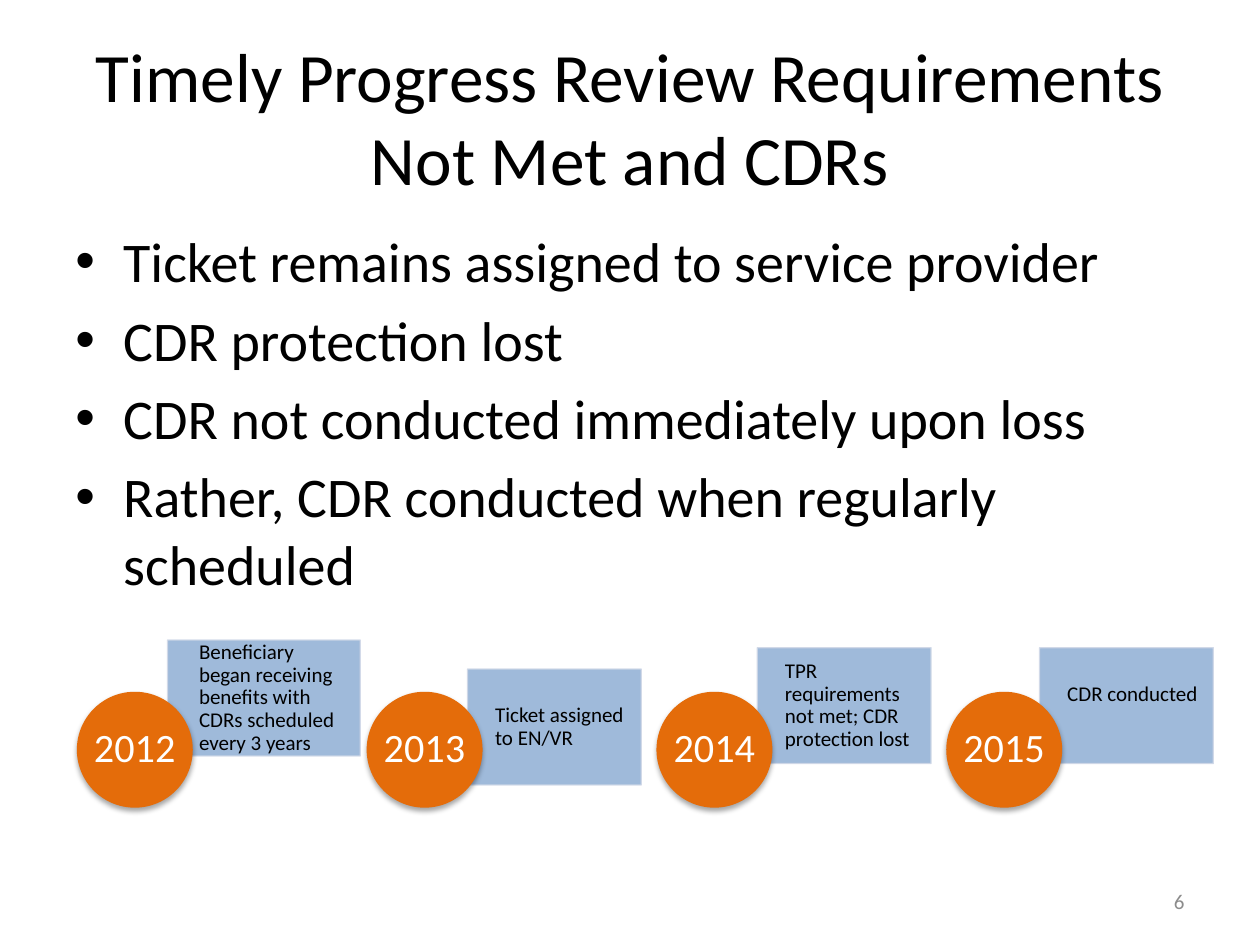
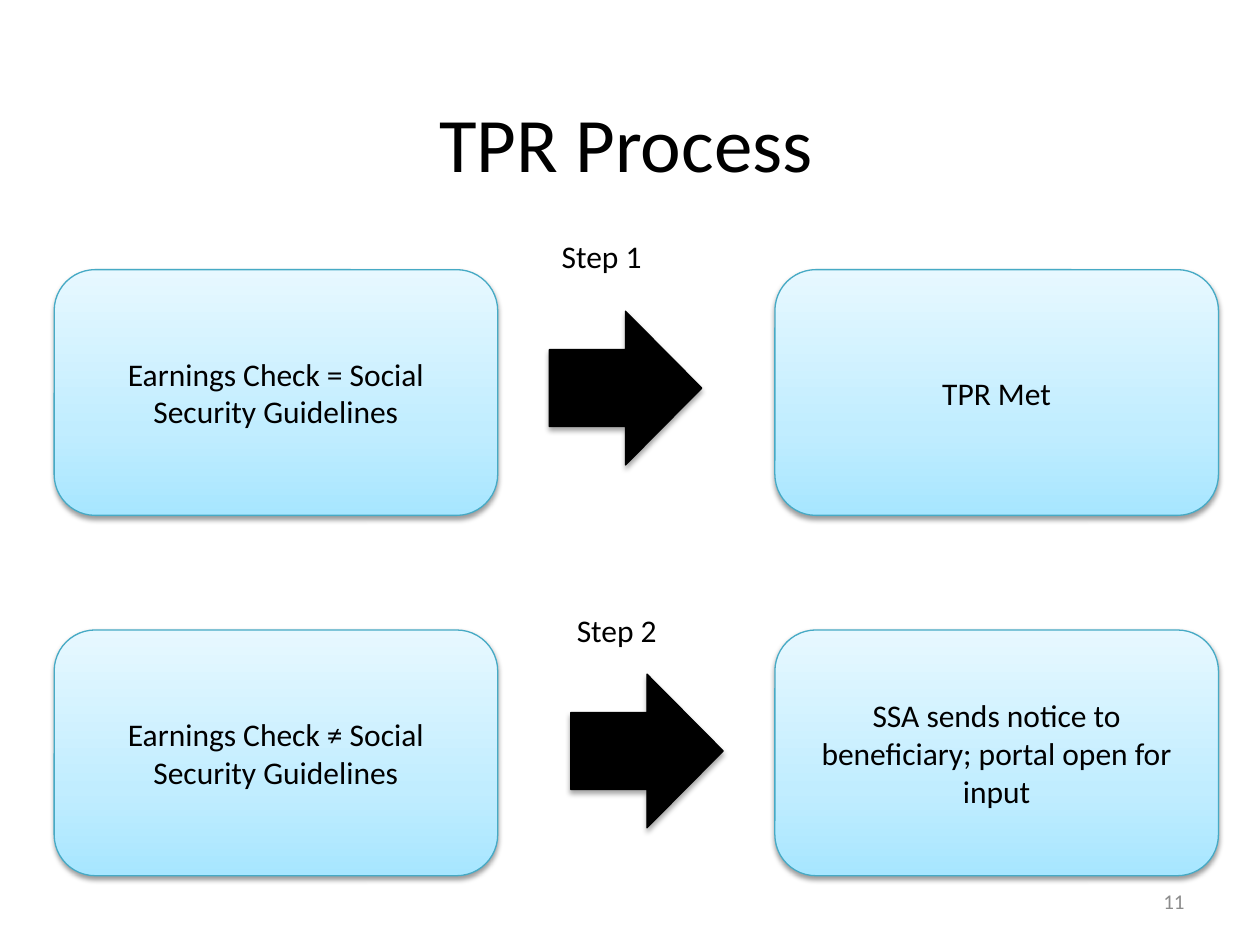
from pptx import Presentation
from pptx import util as u
from pptx.dml.color import RGBColor
from pptx.enum import shapes, text
from pptx.oxml import parse_xml
from pptx.oxml.ns import nsdecls, qn

FONT = "Calibri"
COLORS = {
    "text": "000000", "number": "8C8C8C", "year": "FFFFFF",
    "event": "95B3D7", "event_line": "D0D8E8", "circle": "E46C0A",
    "step_line": "46AAC5", "arrow": "000000", "shadow": "000000",
}
STEP_GRADIENT = [(0, "A7E6FF"), (35, "C1EDFF"), (100, "E7F8FF")]

# Content of the review slide
REVIEW_TITLE = "Timely Progress Review Requirements Not Met and CDRs"
REVIEW_POINTS = [
    "Ticket remains assigned to service provider",
    "CDR protection lost",
    "CDR not conducted immediately upon loss",
    "Rather, CDR conducted when regularly scheduled",
]
# year, event, left, top, width, text indent, bottom inset
TIMELINE = [
    ("2012", "Beneficiary began receiving benefits with CDRs scheduled every 3 years",
     1.33, 5.08, 1.53, 0.25, 0.09),
    ("2013", "Ticket assigned to EN/VR", 3.71, 5.31, 1.38, 0.22, 0.09),
    ("2014", "TPR requirements not met; CDR protection lost", 6.01, 5.14, 1.38, 0.22, 0.09),
    ("2015", "CDR conducted", 8.25, 5.14, 1.38, 0.22, 0.27),
]
CIRCLE_LEFT, CIRCLE_TOP, CIRCLE_PITCH, MARK_SIZE = 0.61, 5.49, 2.3, 0.92

# Content of the process slide
PROCESS_TITLE = "TPR Process"
# label, label place, check, result, row top, arrow place
STEPS = [
    ("Step 1", (4.36, 1.83), "Earnings Check = Social Security Guidelines",
     "TPR Met", 2.14, (4.36, 2.47)),
    ("Step 2", (4.48, 4.8), "Earnings Check ≠ Social Security Guidelines",
     "SSA sends notice to beneficiary; portal open for input", 5, (4.53, 5.35)),
]
CHECK_LEFT, RESULT_LEFT, STEP_SIZE = 0.43, 6.15, (3.52, 1.95)

LEFT, CENTER, RIGHT = text.PP_ALIGN.LEFT, text.PP_ALIGN.CENTER, text.PP_ALIGN.RIGHT
MIDDLE, TOP = text.MSO_ANCHOR.MIDDLE, text.MSO_ANCHOR.TOP


def rgb(name):
    return RGBColor.from_string(COLORS[name])


def write(part, lines, size, color="text", align=LEFT, anchor=MIDDLE, insets=None):
    """Fill a part with one paragraph per line and return the paragraphs."""
    frame = part.text_frame
    frame.word_wrap = True
    frame.auto_size = text.MSO_AUTO_SIZE.NONE
    frame.vertical_anchor = anchor
    if insets:
        (frame.margin_left, frame.margin_top,
         frame.margin_right, frame.margin_bottom) = map(u.Inches, insets)
    for index, line in enumerate(lines):
        paragraph = frame.add_paragraph() if index else frame.paragraphs[0]
        paragraph.alignment = align
        run = paragraph.add_run()
        run.text = line
        run.font.name, run.font.size = FONT, u.Pt(size)
        run.font.color.rgb = rgb(color)
    return frame.paragraphs


def add_label(slide, place, lines, size, **style):
    return write(slide.shapes.add_textbox(*map(u.Inches, place)), lines, size, **style)


def add_block(slide, kind, place, fill=None, line=None):
    block = slide.shapes.add_shape(kind, *map(u.Inches, place))
    block.shadow.inherit = False
    if fill:
        block.fill.solid()
        block.fill.fore_color.rgb = rgb(fill)
    if line:
        block.line.color.rgb = rgb(line)
        block.line.width = u.Pt(0.75)
    else:
        block.line.fill.background()
    return block


def cast_shadow(block, alpha, distance):
    block._element.spPr.find(qn("a:effectLst")).append(parse_xml(
        f'<a:outerShdw {nsdecls("a")} blurRad="{u.Pt(3.1)}" dist="{u.Pt(distance)}" '
        f'dir="5400000" rotWithShape="0"><a:srgbClr val="{COLORS["shadow"]}">'
        f'<a:alpha val="{alpha * 1000}"/></a:srgbClr></a:outerShdw>'))


def make_translucent(block, percent):
    for color in block._element.spPr.iter(qn("a:srgbClr")):
        color.append(parse_xml(f'<a:alpha {nsdecls("a")} val="{percent * 1000}"/>'))


def add_bullet(paragraph):
    paragraph.space_before = u.Pt(6.4)
    props = paragraph._p.get_or_add_pPr()
    props.set("marL", str(u.Inches(0.38)))
    props.set("indent", str(u.Inches(-0.38)))
    props.append(parse_xml(f'<a:buFont {nsdecls("a")} typeface="Arial"/>'))
    props.append(parse_xml(f'<a:buChar {nsdecls("a")} char="•"/>'))


def start_slide(deck, title, place, size, number):
    slide = deck.slides.add_slide(deck.slide_layouts[5])
    heading = slide.shapes.title
    heading.left, heading.top, heading.width, heading.height = map(u.Inches, place)
    write(heading, [title], size, align=CENTER)
    add_label(slide, (7.17, 6.95, 2.33, 0.4), [number], 12, color="number", align=RIGHT)
    return slide


def add_event(slide, index, year, event, left, top, width, indent, bottom):
    card = add_block(slide, shapes.MSO_SHAPE.RECTANGLE, (left, top, width, MARK_SIZE),
                     "event", "event_line")
    make_translucent(card, 90)
    caption = write(card, [event], 12, insets=(indent, 0.09, 0.09, bottom))
    circle = add_block(slide, shapes.MSO_SHAPE.OVAL,
                       (CIRCLE_LEFT + index * CIRCLE_PITCH, CIRCLE_TOP, MARK_SIZE, MARK_SIZE),
                       "circle")
    cast_shadow(circle, 35, 1.8)
    date = write(circle, [year], 23, color="year", align=CENTER, insets=(0, 0, 0, 0))
    circle.text_frame.word_wrap = False
    for paragraph in (*caption, *date):
        paragraph.line_spacing = 0.9


def add_step_box(slide, left, top, caption):
    box = add_block(slide, shapes.MSO_SHAPE.ROUNDED_RECTANGLE, (left, top, *STEP_SIZE),
                    line="step_line")
    box.fill.gradient()
    box.fill.gradient_angle = 90
    stops = box._element.spPr.find(".//" + qn("a:gsLst"))
    for stop in list(stops):
        stops.remove(stop)
    for position, color in STEP_GRADIENT:
        stops.append(parse_xml(f'<a:gs {nsdecls("a")} pos="{position * 1000}">'
                               f'<a:srgbClr val="{color}"/></a:gs>'))
    cast_shadow(box, 38, 1.6)
    write(box, [caption], 18, align=CENTER)


def build_review(deck):
    slide = start_slide(deck, REVIEW_TITLE, (0.5, 0.3, 9, 1.25), 39.6, "6")
    for point in add_label(slide, (0.5, 1.75, 9, 4.95), REVIEW_POINTS, 32, anchor=TOP):
        add_bullet(point)
    for index, entry in enumerate(TIMELINE):
        add_event(slide, index, *entry)


def build_process(deck):
    slide = start_slide(deck, PROCESS_TITLE, (0.47, 0.5, 9, 1.25), 44, "11")
    for label, label_place, check, result, top, arrow_place in STEPS:
        add_step_box(slide, CHECK_LEFT, top, check)
        arrow = add_block(slide, shapes.MSO_SHAPE.RIGHT_ARROW, (*arrow_place, 1.21, 1.22),
                          "arrow", "arrow")
        cast_shadow(arrow, 35, 1.8)
        add_step_box(slide, RESULT_LEFT, top, result)
        add_label(slide, (*label_place, 0.97, 0.4), [label], 18, anchor=TOP)


def main():
    deck = Presentation()
    deck.slide_width, deck.slide_height = u.Inches(10), u.Inches(7.5)
    build_review(deck)
    build_process(deck)
    deck.save("out.pptx")


if __name__ == "__main__":
    main()
